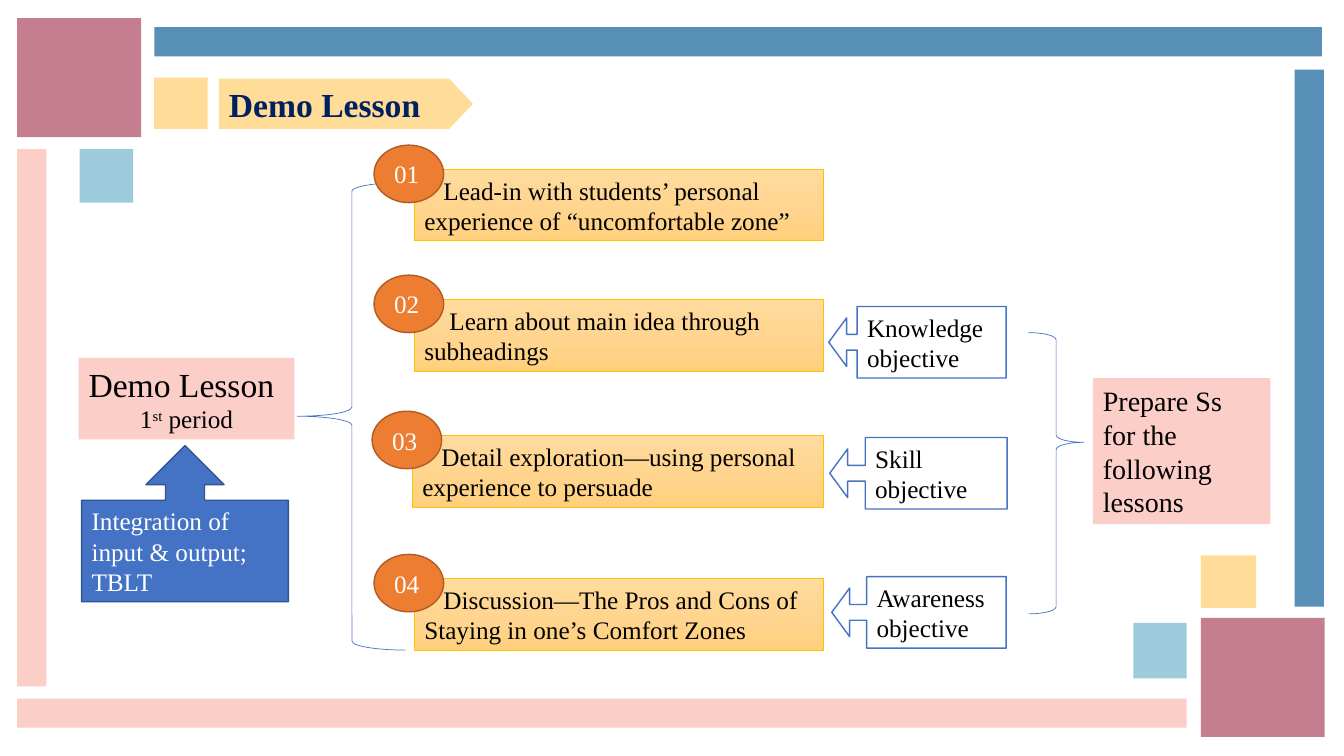
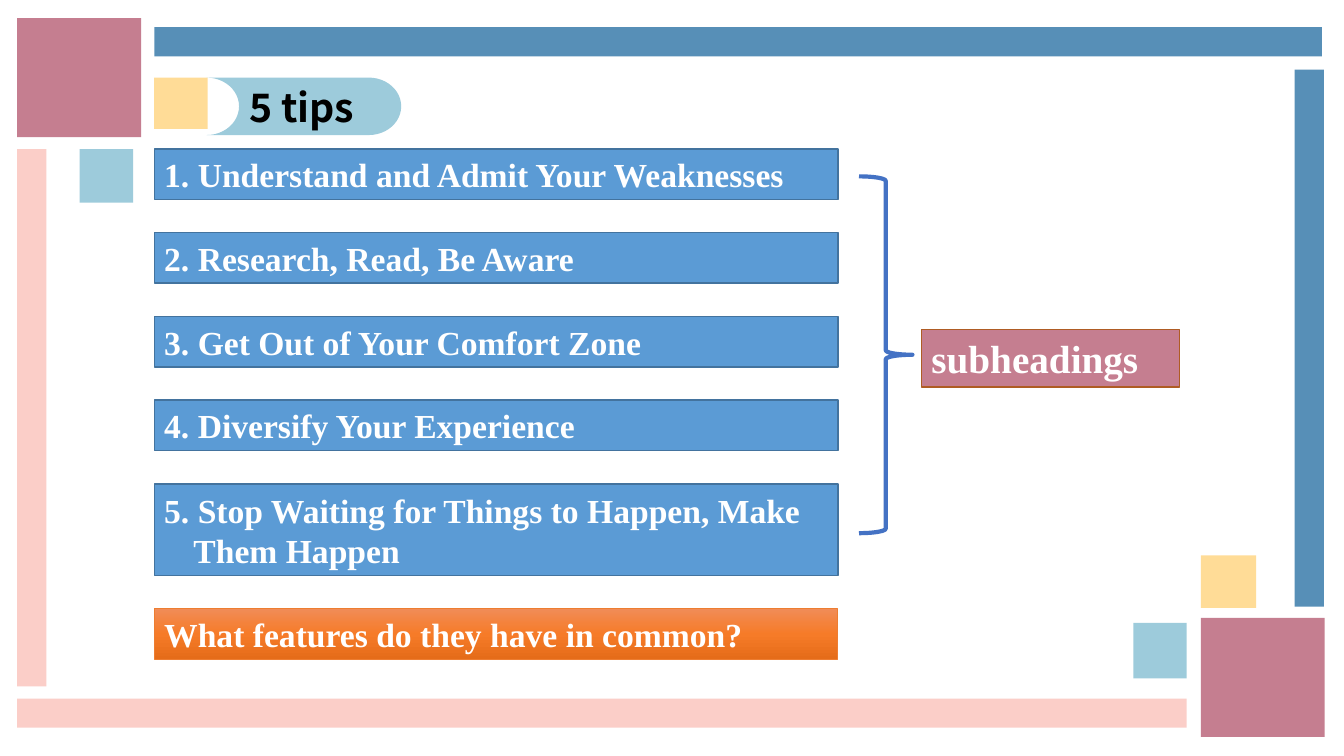
from copy import deepcopy

from pptx import Presentation
from pptx.dml.color import RGBColor
from pptx.enum.shapes import MSO_SHAPE as Shape
from pptx.enum.text import MSO_ANCHOR as Anchor, MSO_AUTO_SIZE as AutoSize, PP_ALIGN as Align
from pptx.oxml.ns import qn
from pptx.util import Pt

PX = 9144  # EMU in one px, 100 px to the inch
SERIF = "Times New Roman"
SANS = "Noto Sans CJK SC"

WHITE = RGBColor(0xFF, 0xFF, 0xFF)
BLACK = RGBColor(0, 0, 0)
NAVY = RGBColor(0x00, 0x20, 0x60)
ROSE = RGBColor(0xC5, 0x7E, 0x90)
PINK = RGBColor(0xFB, 0xCE, 0xC8)
STEEL = RGBColor(0x57, 0x8F, 0xB7)
AQUA = RGBColor(0x9D, 0xCB, 0xDB)
CREAM = RGBColor(0xFF, 0xDC, 0x97)
BLUE = RGBColor(0x44, 0x72, 0xC4)
BLUE_EDGE = RGBColor(0x32, 0x54, 0x91)
SKY = RGBColor(0x5B, 0x9B, 0xD5)
SKY_EDGE = RGBColor(0x43, 0x73, 0x9E)
ORANGE = RGBColor(0xED, 0x7D, 0x31)
RUST = RGBColor(0xAF, 0x5C, 0x24)
GOLD = RGBColor(0xFF, 0xC0, 0x00)
GOLD_FADE = (RGBColor(0xFF, 0xDB, 0x9E), RGBColor(0xFF, 0xD5, 0x90), RGBColor(0xFF, 0xD0, 0x7C))
ORANGE_FADE = (RGBColor(0xF1, 0x8C, 0x57), RGBColor(0xF6, 0x7B, 0x28), RGBColor(0xE5, 0x6C, 0x19))

# Frame blocks shared by every slide: box and colour
FRAME = [
    ((17, 18, 123, 118), ROSE),
    ((1191, 613, 123, 118), ROSE),
    ((17, 148, 29, 533), PINK),
    ((17, 693, 1160, 29), PINK),
    ((1284, 69, 29, 533), STEEL),
    ((153, 27, 1158, 29), STEEL),
    ((79, 148, 53, 53), AQUA),
    ((1191, 551, 55, 52), CREAM),
    ((153, 77, 53, 51), CREAM),
    ((1124, 618, 53, 55), AQUA),
]


def emu(box):
    return [length * PX for length in box]


def fade(shape, colors):
    """Fill a shape from top to bottom with three colours."""
    shape.fill.gradient()
    shape.fill.gradient_angle = 270
    stop_list = shape.element.find(".//" + qn("a:gsLst"))
    stop_list.insert(1, deepcopy(stop_list[0]))
    for index, (stop, color) in enumerate(zip(shape.fill.gradient_stops, colors)):
        stop.position = index / 2
        stop.color.rgb = color


def draw(page, kind, box, fill=None, line=None, weight=1, adjust=()):
    shape = page.shapes.add_shape(kind, *emu(box))
    shape.shadow.inherit = False
    for index, value in enumerate(adjust):
        shape.adjustments[index] = value
    if fill is None:
        shape.fill.background()
    elif isinstance(fill, RGBColor):
        shape.fill.solid()
        shape.fill.fore_color.rgb = fill
    else:
        fade(shape, fill)
    if line is None:
        shape.line.fill.background()
    else:
        shape.line.color.rgb = line
        shape.line.width = Pt(weight)
    return shape


def prepare(shape):
    """Set wrapping and anchoring, and return the first paragraph."""
    frame = shape.text_frame
    frame.word_wrap = True
    frame.auto_size = AutoSize.NONE
    frame.vertical_anchor = Anchor.MIDDLE
    para = frame.paragraphs[0]
    para.alignment = Align.LEFT
    return para


def add_run(para, text, size, color=BLACK, bold=False, font=SERIF):
    span = para.add_run()
    span.text = text
    span.font.size = Pt(size)
    span.font.name = font
    span.font.bold = bold
    span.font.color.rgb = color
    return span


def indent(para, first, margin=0):
    settings = para._p.get_or_add_pPr()
    settings.set("marL", str(margin * PX))
    settings.set("indent", str(first * PX))


def write(shape, text, size, color=BLACK, bold=False):
    para = prepare(shape)
    add_run(para, text, size, color, bold)
    return para


def start_page(deck):
    page = deck.slides.add_slide(deck.slide_layouts[5])
    for box, color in FRAME:
        draw(page, Shape.RECTANGLE, box, color)
    return page


def place_title(page, box, text, size, color, font):
    title = page.shapes.title
    title.left, title.top, title.width, title.height = emu(box)
    add_run(prepare(title), text, size, color, True, font)
    title.element.getparent().append(title.element)  # above its banner


def lesson_source(page, box):
    """Lesson name with the callout pointing up at it."""
    left, top, width, height = box
    name = draw(page, Shape.RECTANGLE, (left, top, width, 81), PINK)
    write(name, "Demo Lesson", 24)
    period = name.text_frame.add_paragraph()
    period.alignment = Align.CENTER
    add_run(period, "1", 18)
    ordinal = add_run(period, "st", 18)
    ordinal.font._element.set("baseline", "30000")
    add_run(period, " period", 18)
    method = draw(page, Shape.UP_ARROW_CALLOUT, (left + 3, top + 87, width - 9, height - 87),
                  BLUE, BLUE_EDGE)
    write(method, "Integration of input & output; TBLT", 18, WHITE)


def lesson_step(page, box, number, text, first):
    """Numbered badge overlapping the corner of a bar."""
    left, top, width, height = box
    bar = draw(page, Shape.RECTANGLE, (left + 40, top + 24, width - 40, height - 24),
               GOLD_FADE, GOLD, 0.5)
    indent(write(bar, text, 18), first)
    badge = draw(page, Shape.OVAL, (left, top, 69, 57), ORANGE, RUST)
    write(badge, f"{number:02}", 18, WHITE)


def lesson_page(deck):
    page = start_page(deck)
    banner = (217, 78, 252, 50)
    draw(page, Shape.PENTAGON, banner, CREAM, adjust=[0.473])
    place_title(page, banner, "Demo Lesson", 24, NAVY, SERIF)
    lesson_source(page, (78, 355, 214, 242))
    draw(page, Shape.LEFT_BRACE, (295, 181, 108, 464), None, BLUE, 0.5)

    # Steps
    steps = [
        (371, 144, 19, "Lead-in with students’ personal experience of “uncomfortable zone”"),
        (371, 273, 25, "Learn about main idea through subheadings"),
        (369, 408, 19, "Detail exploration—using personal experience to persuade"),
        (371, 550, 19, "Discussion—The Pros and Cons of Staying in one’s Comfort Zones"),
    ]
    for number, (left, top, first, text) in enumerate(steps, 1):
        lesson_step(page, (left, top, 817 - left, 95), number, text, first)

    # Objectives
    objectives = [
        ((822, 304, 176, 71), 0.84, "Knowledge objective"),
        ((823, 434, 176, 71), 0.8, "Skill objective"),
        ((825, 572, 173, 71), 0.8, "Awareness objective"),
    ]
    for box, share, text in objectives:
        callout = draw(page, Shape.LEFT_ARROW_CALLOUT, box, WHITE, BLUE,
                       adjust=[0.22, 0.34, 0.25, share])
        write(callout, text, 18)

    # Outcome
    draw(page, Shape.RIGHT_BRACE, (1020, 330, 55, 279), None, BLUE, 0.5, [0.13, 0.39])
    outcome = draw(page, Shape.RECTANGLE, (1084, 375, 176, 145), PINK)
    write(outcome, "Prepare Ss for the following lessons", 20)


def tip_list(page, box, tips, step):
    left, top, width, height = box
    for index, tip in enumerate(tips):
        extra = 41 if index == len(tips) - 1 else 0  # the last tip takes two lines
        bar = draw(page, Shape.RECTANGLE, (left, top + index * step, width, height + extra),
                   SKY, SKY_EDGE)
        indent(write(bar, f"{index + 1}. {tip}", 24, WHITE, True), -29, 29)


def tips_page(deck):
    page = start_page(deck)
    banner = draw(page, Shape.FLOWCHART_STORED_DATA, (205, 77, 193, 57), AQUA)
    banner.element.spPr.find(qn("a:xfrm")).set("flipH", "1")
    place_title(page, (237, 77, 161, 57), "5 tips", 28, BLACK, SANS)

    tips = [
        "Understand and Admit Your Weaknesses",
        "Research, Read, Be Aware",
        "Get Out of Your Comfort Zone",
        "Diversify Your Experience",
        "Stop Waiting for Things to Happen, Make Them Happen",
    ]
    tip_list(page, (153, 148, 678, 50), tips, 83)

    # Summary and question
    draw(page, Shape.RIGHT_BRACE, (852, 175, 53, 354), None, BLUE, 3)
    summary = draw(page, Shape.RECTANGLE, (914, 327, 256, 57), ROSE, RUST)
    write(summary, "subheadings", 28, WHITE, True)
    question = draw(page, Shape.RECTANGLE, (153, 604, 678, 50), ORANGE_FADE, ORANGE, 0.5)
    write(question, "What features do they have in common?", 24, WHITE, True)


def main():
    deck = Presentation()
    deck.slide_width, deck.slide_height = emu((1333, 750))
    lesson_page(deck)
    tips_page(deck)
    deck.save("out.pptx")


if __name__ == "__main__":
    main()
